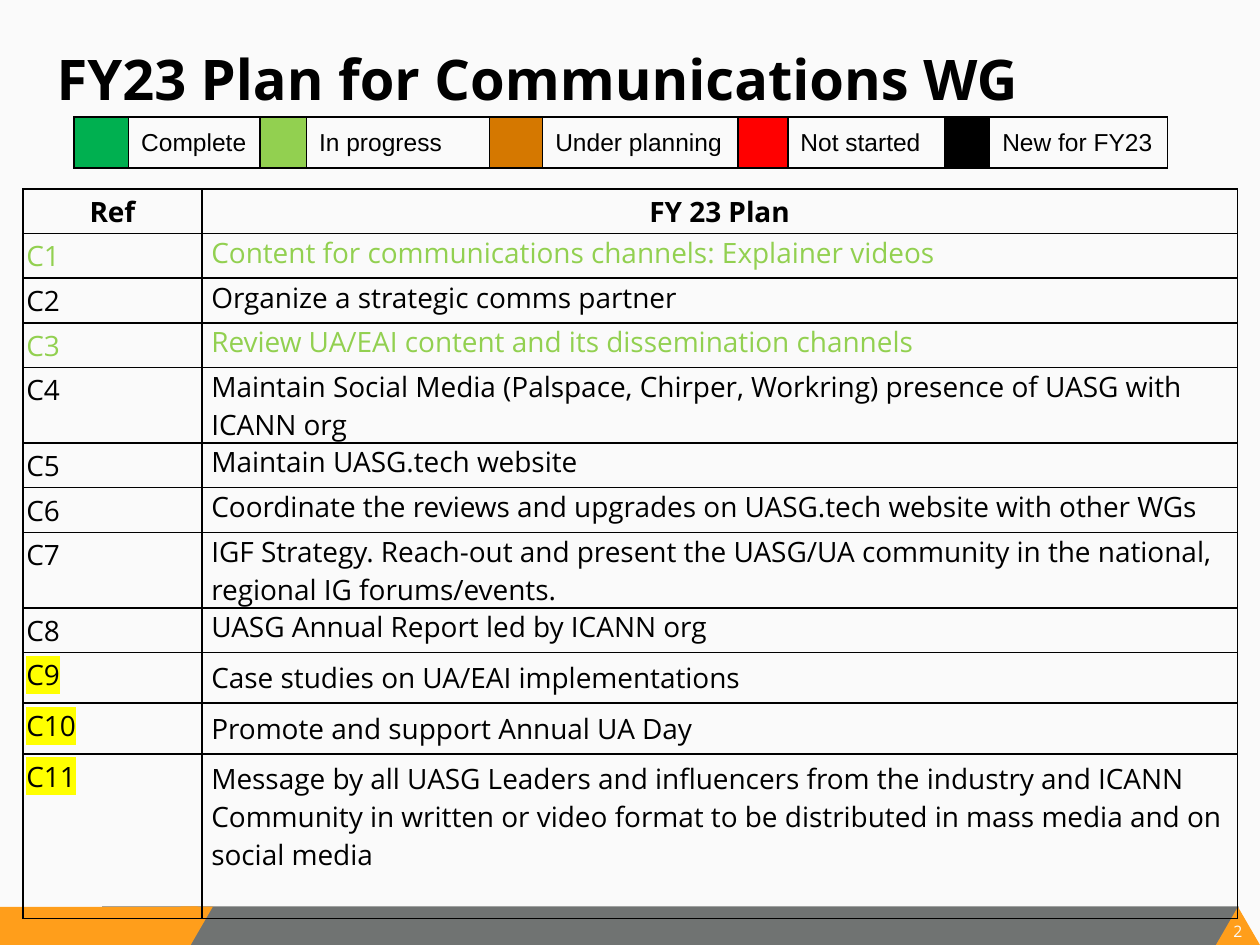
import dataclasses

import pptx
import pptx.dml.color
import pptx.enum.shapes
import pptx.enum.text
import pptx.oxml
import pptx.oxml.ns
import pptx.util
from pptx.util import Pt


@dataclasses.dataclass(frozen=True)
class Theme:
    background: str = "FAFAFA"
    text: str = "000000"
    grey: str = "707372"
    orange: str = "FF9E1B"
    complete: str = "00B050"
    progress: str = "92D050"
    planning: str = "D57800"
    not_started: str = "FF0000"
    highlight: str = "FFFF00"
    font: str = "Open Sans"
    legend_font: str = "Arial"
    title_size: int = 32
    body_size: int = 16
    legend_size: int = 14
    number_size: int = 9


theme = Theme()
color = pptx.dml.color.RGBColor.from_string
shapes = pptx.enum.shapes.MSO_SHAPE
anchors = pptx.enum.text.MSO_ANCHOR
alignments = pptx.enum.text.PP_ALIGN
namespace = pptx.oxml.ns.nsdecls("a")


def write(text_frame, text, size, text_color=theme.text, font=theme.font, bold=False, align=alignments.LEFT):
    text_frame.text = text
    paragraph = text_frame.paragraphs[0]
    paragraph.alignment = align
    run = paragraph.runs[0]
    run.font.size = Pt(size)
    run.font.name = font
    run.font.bold = bold
    run.font.color.rgb = color(text_color)
    return run


def format_cell(cell, horizontal, vertical, anchor=anchors.TOP, fill=None):
    cell.margin_left = cell.margin_right = Pt(horizontal)
    cell.margin_top = cell.margin_bottom = Pt(vertical)
    cell.vertical_anchor = anchor
    if fill:
        cell.fill.solid()
        cell.fill.fore_color.rgb = color(fill)
    else:
        cell.fill.background()
    properties = cell._tc.get_or_add_tcPr()
    for index, side in enumerate(("lnL", "lnR", "lnT", "lnB")):
        border = pptx.oxml.parse_xml(
            f'<a:{side} {namespace} w="12700"><a:solidFill><a:srgbClr val="{theme.text}"/></a:solidFill></a:{side}>'
        )
        properties.insert(index, border)


presentation = pptx.Presentation()
presentation.slide_width = Pt(720)
presentation.slide_height = Pt(540)
slide = presentation.slides.add_slide(presentation.slide_layouts[5])
slide.background.fill.solid()
slide.background.fill.fore_color.rgb = color(theme.background)

footer_parts = [
    (shapes.RECTANGLE, 58.3, 518, 649.5, 22, theme.grey),
    (shapes.RECTANGLE, 0, 518.2, 108, 21.8, theme.orange),
    (shapes.ISOSCELES_TRIANGLE, 694.8, 518.2, 25.2, 21.8, theme.orange),
    (shapes.PARALLELOGRAM, 96.5, 518, 25.2, 22, theme.orange),
    (shapes.RECTANGLE, 103, 518, 10, 9.4, theme.orange),
]
for kind, left, top, width, height, fill in footer_parts:
    shape = slide.shapes.add_shape(kind, Pt(left), Pt(top), Pt(width), Pt(height))
    shape.shadow.inherit = False
    shape.fill.solid()
    shape.fill.fore_color.rgb = color(fill)
    shape.line.fill.background()
    if kind == shapes.PARALLELOGRAM:
        shape.adjustments[0] = 0.58
        shape.rotation = 180

page_number = slide.shapes.add_textbox(Pt(701.3), Pt(527), Pt(12.2), Pt(11))
frame = page_number.text_frame
frame.margin_left = frame.margin_right = frame.margin_top = frame.margin_bottom = 0
write(frame, "2", theme.number_size, theme.background, align=alignments.CENTER)

title = slide.shapes.title
title.left, title.top, title.width, title.height = Pt(25.2), Pt(21.6), Pt(652.3), Pt(90)
title.text_frame.vertical_anchor = anchors.TOP
write(title.text_frame, "FY23 Plan for Communications WG", theme.title_size, bold=True)

legend = [
    (theme.complete, 31.2, "Complete", 75),
    (theme.progress, 26.7, "In progress", 104.6),
    (theme.planning, 30.4, "Under planning", 111.5),
    (theme.not_started, 28.6, "Not started", 89.7),
    (theme.text, 25.7, "New for FY23", 101.7),
]
legend_table = slide.shapes.add_table(1, 2 * len(legend), Pt(42.3), Pt(66.8), Pt(625.1), Pt(29.3)).table
legend_table.first_row = legend_table.horz_banding = False
for index, (swatch, swatch_width, label, label_width) in enumerate(legend):
    legend_table.columns[2 * index].width = Pt(swatch_width)
    legend_table.columns[2 * index + 1].width = Pt(label_width)
    format_cell(legend_table.cell(0, 2 * index), 7.2, 3.6, fill=swatch)
    label_cell = legend_table.cell(0, 2 * index + 1)
    format_cell(label_cell, 7.2, 3.6, anchors.MIDDLE)
    write(label_cell.text_frame, label, theme.legend_size, font=theme.legend_font)

one_line, two_lines, padded, tall = 25.5, 43.3, 28.9, 94
plan = [
    ("Content for communications channels: Explainer videos", one_line),
    ("Organize a strategic comms partner", one_line),
    ("Review UA/EAI content and its dissemination channels", one_line),
    ("Maintain Social Media (Palspace, Chirper, Workring) presence of UASG with ICANN org", two_lines),
    ("Maintain UASG.tech website", one_line),
    ("Coordinate the reviews and upgrades on UASG.tech website with other WGs", one_line),
    ("IGF Strategy. Reach-out and present the UASG/UA community in the national, "
     "regional IG forums/events.", two_lines),
    ("UASG Annual Report led by ICANN org", one_line),
    ("Case studies on UA/EAI implementations", padded),
    ("Promote and support Annual UA Day", padded),
    ("Message by all UASG Leaders and influencers from the industry and ICANN Community in written "
     "or video format to be distributed in mass media and on social media", tall),
]
in_progress = {1, 3}
first_new = 9
plan_height = one_line + sum(height for _, height in plan)
plan_table = slide.shapes.add_table(len(plan) + 1, 2, Pt(13.1), Pt(108), Pt(694), Pt(plan_height)).table
plan_table.first_row = plan_table.horz_banding = False
plan_table.columns[0].width = Pt(102.3)
plan_table.columns[1].width = Pt(591.7)
plan_table.rows[0].height = Pt(one_line)
for column, heading in enumerate(("Ref", "FY 23 Plan")):
    cell = plan_table.cell(0, column)
    format_cell(cell, 2, 2)
    write(cell.text_frame, heading, theme.body_size, bold=True, align=alignments.CENTER)

for number, (activity, height) in enumerate(plan, start=1):
    plan_table.rows[number].height = Pt(height)
    text_color = theme.progress if number in in_progress else theme.text
    is_new = number >= first_new
    reference_cell, activity_cell = plan_table.cell(number, 0), plan_table.cell(number, 1)
    format_cell(reference_cell, 2, 2)
    format_cell(activity_cell, 5.4, 3.6 if is_new else 0)
    reference = write(reference_cell.text_frame, f"C{number}", theme.body_size, text_color)
    write(activity_cell.text_frame, activity, theme.body_size, text_color)
    if is_new:
        highlight = pptx.oxml.parse_xml(
            f'<a:highlight {namespace}><a:srgbClr val="{theme.highlight}"/></a:highlight>'
        )
        reference._r.rPr.find(pptx.oxml.ns.qn("a:solidFill")).addnext(highlight)

presentation.save("out.pptx")
